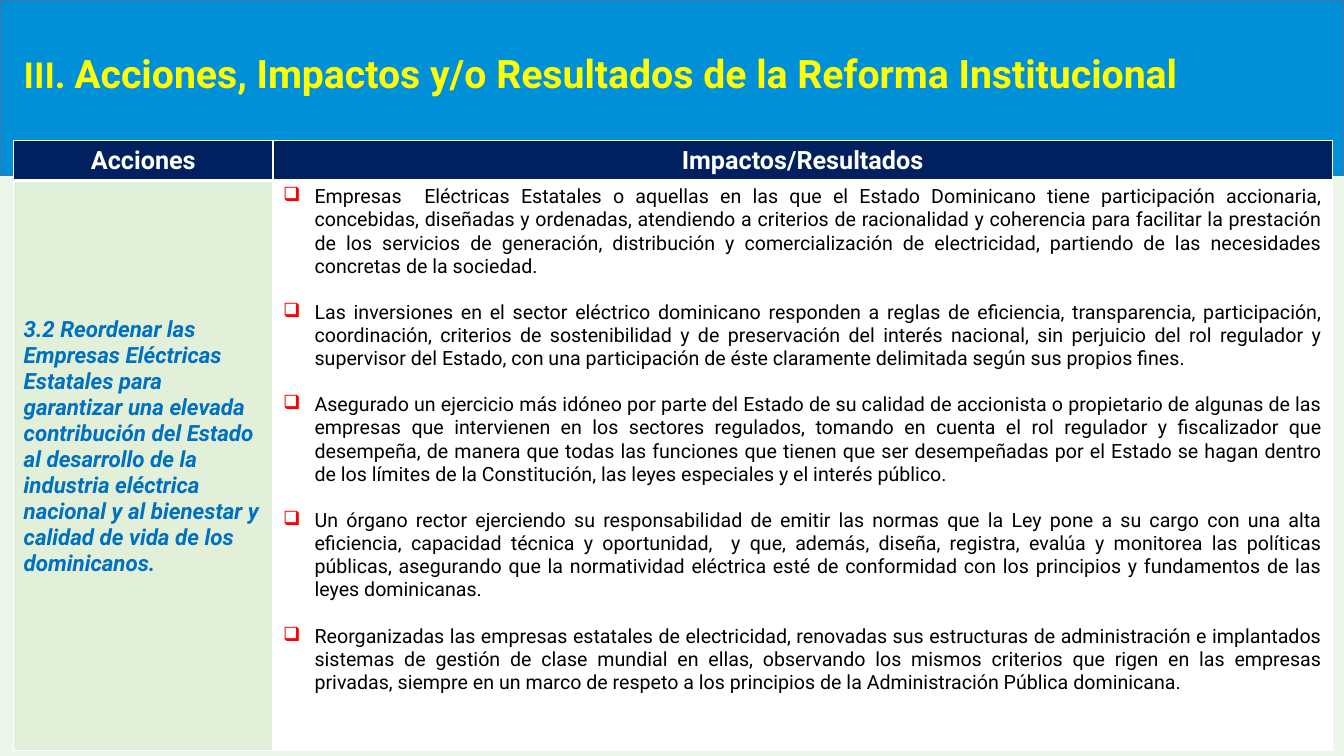
"""Builds the slide on actions and results of the institutional reform."""
from lxml.etree import SubElement
from pptx import Presentation
from pptx.dml.color import RGBColor
from pptx.enum.shapes import MSO_SHAPE as Shape
from pptx.enum.text import MSO_ANCHOR as Anchor, MSO_AUTO_SIZE as AutoSize, PP_ALIGN as Align
from pptx.oxml.ns import qn
from pptx.util import Pt

EMU_PER_PX = 9525
TITLE_ONLY = 5

BACKGROUND = RGBColor(0xEC, 0xF6, 0xEB)
BAND = RGBColor(0x00, 0x90, 0xD7)
BAND_EDGE = RGBColor(0x43, 0x73, 0x9E)
YELLOW = RGBColor(0xFF, 0xFF, 0x00)
NAVY = RGBColor(0x00, 0x20, 0x60)
BLUE = RGBColor(0x00, 0x70, 0xC0)
PALE_GREEN = RGBColor(0xE2, 0xF0, 0xD9)
RED = RGBColor(0xFF, 0x00, 0x00)
WHITE = RGBColor(0xFF, 0xFF, 0xFF)
BLACK = RGBColor(0x00, 0x00, 0x00)

HEADINGS = ["Acciones", "Impactos/Resultados"]
ACTION = (
    "3.2 Reordenar las Empresas Eléctricas Estatales para garantizar una elevada contribución "
    "del Estado al desarrollo de la industria eléctrica nacional y al bienestar y calidad de "
    "vida de los dominicanos."
)
RESULTS = [
    "Empresas  Eléctricas Estatales o aquellas en las que el Estado Dominicano tiene "
    "participación accionaria, concebidas, diseñadas y ordenadas, atendiendo a criterios de "
    "racionalidad y coherencia para facilitar la prestación de los servicios de generación, "
    "distribución y comercialización de electricidad, partiendo de las necesidades concretas "
    "de la sociedad.",
    "Las inversiones en el sector eléctrico dominicano responden a reglas de eficiencia, "
    "transparencia, participación, coordinación, criterios de sostenibilidad y de preservación "
    "del interés nacional, sin perjuicio del rol regulador y supervisor del Estado, con una "
    "participación de éste claramente delimitada según sus propios fines.",
    "Asegurado un ejercicio más idóneo por parte del Estado de su calidad de accionista o "
    "propietario de algunas de las empresas que intervienen en los sectores regulados, tomando "
    "en cuenta el rol regulador y fiscalizador que desempeña, de manera que todas las funciones "
    "que tienen que ser desempeñadas por el Estado se hagan dentro de los límites de la "
    "Constitución, las leyes especiales y el interés público.",
    "Un órgano rector ejerciendo su responsabilidad de emitir las normas que la Ley pone a su "
    "cargo con una alta eficiencia, capacidad técnica y oportunidad,  y que, además, diseña, "
    "registra, evalúa y monitorea las políticas públicas, asegurando que la normatividad "
    "eléctrica esté de conformidad con los principios y fundamentos de las leyes dominicanas.",
    "Reorganizadas las empresas estatales de electricidad, renovadas sus estructuras de "
    "administración e implantados sistemas de gestión de clase mundial en ellas, observando los "
    "mismos criterios que rigen en las empresas privadas, siempre en un marco de respeto a los "
    "principios de la Administración Pública dominicana.",
]


def px(length):
    return length * EMU_PER_PX


def write_text(paragraph, text, size=14, color=BLACK, face="Roboto", bold=False,
               italic=False, align=Align.LEFT):
    paragraph.alignment = align
    run = paragraph.add_run()
    run.text = text
    font = run.font
    font.size, font.name, font.bold, font.italic = Pt(size), face, bold, italic
    font.color.rgb = color


class ReformSlide:
    def __init__(self, presentation):
        self.slide = presentation.slides.add_slide(presentation.slide_layouts[TITLE_ONLY])
        self.slide.background.fill.solid()
        self.slide.background.fill.fore_color.rgb = BACKGROUND

    def band(self, left, top, width, height):
        band = self.slide.shapes.add_shape(
            Shape.RECTANGLE, px(left), px(top), px(width), px(height))
        band.shadow.inherit = False
        band.fill.solid()
        band.fill.fore_color.rgb = BAND
        band.line.color.rgb = BAND_EDGE
        band.line.width = Pt(1)
        self.slide.shapes.title.element.addprevious(band.element)

    def title(self, left, top, width, height, number, heading):
        title = self.slide.shapes.title
        title.left, title.top = px(left), px(top)
        title.width, title.height = px(width), px(height)
        frame = title.text_frame
        frame.word_wrap = True
        frame.auto_size = AutoSize.NONE
        frame.vertical_anchor = Anchor.MIDDLE
        paragraph = frame.paragraphs[0]
        write_text(paragraph, number, size=28, color=YELLOW, face="Calibri", bold=True)
        write_text(paragraph, heading, size=28, color=YELLOW, bold=True)

    def table(self, left, top, widths, heights):
        table = self.slide.shapes.add_table(
            len(heights), len(widths), px(left), px(top),
            px(sum(widths)), px(sum(heights))).table
        table.horz_banding = False
        for column, width in zip(table.columns, widths):
            column.width = px(width)
        for row, height in zip(table.rows, heights):
            row.height = px(height)
        return table

    def cell(self, cell, fill, top_edge=1, bottom_edge=1):
        properties = cell._tc.get_or_add_tcPr()
        edges = {"a:lnL": 1, "a:lnR": 1, "a:lnT": top_edge, "a:lnB": bottom_edge}
        for tag, points in edges.items():
            edge = SubElement(properties, qn(tag), w=str(Pt(points)))
            SubElement(SubElement(edge, qn("a:solidFill")), qn("a:srgbClr"), val=str(WHITE))
        cell.fill.solid()
        cell.fill.fore_color.rgb = fill
        return cell.text_frame

    def bullets(self, frame, items, indent):
        for index, item in enumerate(items):
            paragraph = frame.add_paragraph() if index else frame.paragraphs[0]
            properties = paragraph._p.get_or_add_pPr()
            properties.set("marL", str(px(indent)))
            properties.set("indent", str(px(-indent)))
            bullet_color = SubElement(properties, qn("a:buClr"))
            SubElement(bullet_color, qn("a:srgbClr"), val=str(RED))
            SubElement(properties, qn("a:buChar"), char="❑")
            if index:
                paragraph.space_before = Pt(16.4)
            write_text(paragraph, item, align=Align.JUSTIFY)


def main():
    presentation = Presentation()
    presentation.slide_width, presentation.slide_height = px(1280), px(720)
    reform = ReformSlide(presentation)
    reform.band(0, 0, 1280, 167)
    reform.title(13, 42, 1213, 55, "III. ",
                 "Acciones, Impactos y/o Resultados de la Reforma Institucional")

    table = reform.table(13, 134, widths=[247, 1009], heights=[37, 543])
    for column, heading in enumerate(HEADINGS):
        header = reform.cell(table.cell(0, column), NAVY, bottom_edge=3)
        write_text(header.paragraphs[0], heading, size=18, color=WHITE, bold=True,
                   align=Align.CENTER)

    action_cell = table.cell(1, 0)
    action = reform.cell(action_cell, PALE_GREEN, top_edge=3)
    action_cell.margin_top = px(130)
    write_text(action.paragraphs[0], ACTION, size=16, color=BLUE, bold=True, italic=True)

    results = reform.cell(table.cell(1, 1), WHITE, top_edge=3)
    reform.bullets(results, RESULTS, indent=30)
    presentation.save("out.pptx")


if __name__ == "__main__":
    main()
